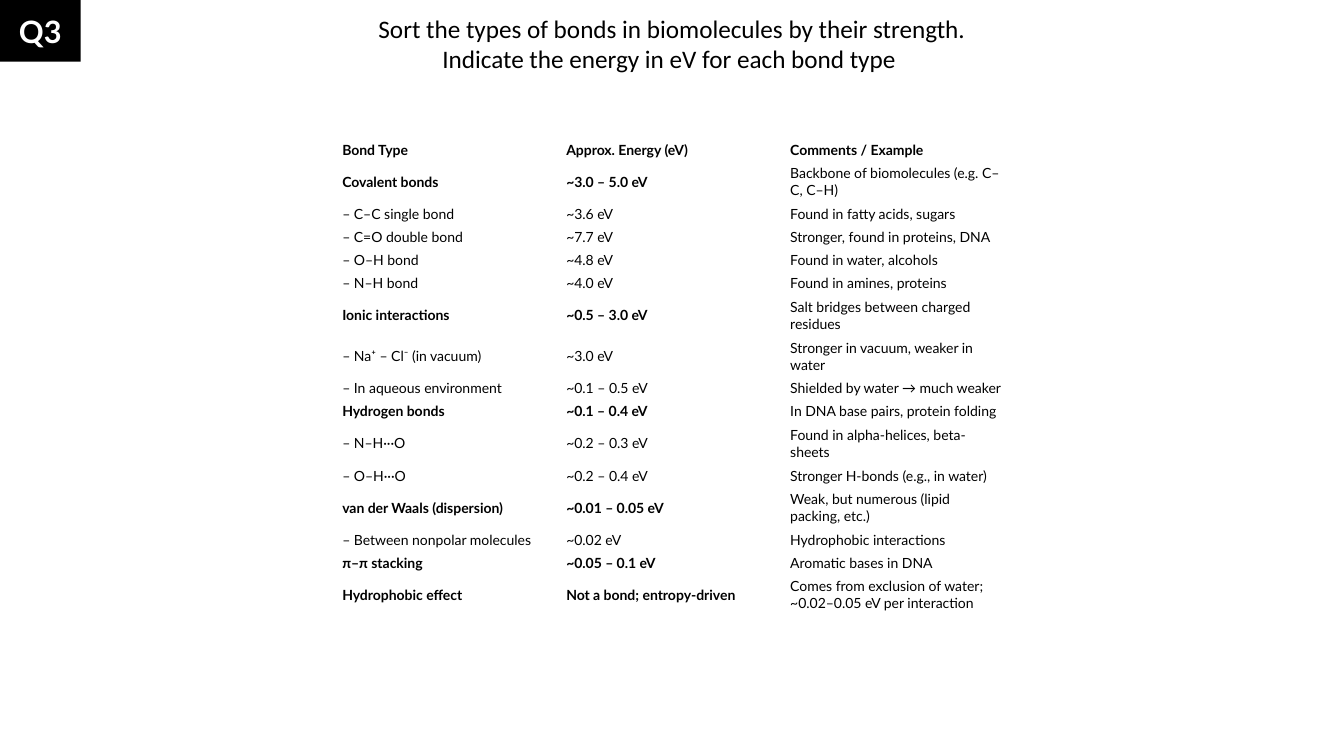
from dataclasses import dataclass

from pptx import Presentation
from pptx.dml.color import RGBColor
from pptx.enum import shapes, text
from pptx.util import Pt


@dataclass(frozen=True)
class Theme:
    ink: RGBColor = RGBColor(0, 0, 0)
    paper: RGBColor = RGBColor(255, 255, 255)
    title_font: str = "Calibri"
    body_font: str = "Lato"
    title_size: int = 18
    badge_size: int = 22
    table_size: int = 10


THEME = Theme()

QUESTION = (
    "Sort the types of bonds in biomolecules by their strength.",
    "Indicate the energy in eV for each bond type ",
)
HEADINGS = ("Bond Type", "Approx. Energy (eV)", "Comments / Example")
BONDS = [
    ("Covalent bonds", "~3.0 – 5.0 eV", "Backbone of biomolecules (e.g. C–C, C–H)"),
    ("– C–C single bond", "~3.6 eV", "Found in fatty acids, sugars"),
    ("– C=O double bond", "~7.7 eV", "Stronger, found in proteins, DNA"),
    ("– O–H bond", "~4.8 eV", "Found in water, alcohols"),
    ("– N–H bond", "~4.0 eV", "Found in amines, proteins"),
    ("Ionic interactions", "~0.5 – 3.0 eV", "Salt bridges between charged residues"),
    ("– Na⁺ – Cl⁻ (in vacuum)", "~3.0 eV", "Stronger in vacuum, weaker in water"),
    ("– In aqueous environment", "~0.1 – 0.5 eV", "Shielded by water → much weaker"),
    ("Hydrogen bonds", "~0.1 – 0.4 eV", "In DNA base pairs, protein folding"),
    ("– N–H···O", "~0.2 – 0.3 eV", "Found in alpha-helices, beta-sheets"),
    ("– O–H···O", "~0.2 – 0.4 eV", "Stronger H-bonds (e.g., in water)"),
    ("van der Waals (dispersion)", "~0.01 – 0.05 eV",
     "Weak, but numerous (lipid packing, etc.)"),
    ("– Between nonpolar molecules", "~0.02 eV", "Hydrophobic interactions"),
    ("π–π stacking", "~0.05 – 0.1 eV", "Aromatic bases in DNA"),
    ("Hydrophobic effect", "Not a bond; entropy-driven",
     "Comes from exclusion of water; ~0.02–0.05 eV per interaction"),
]
ONE_LINE, TWO_LINES = 16.6, 29.2
LONGEST_LINE = 33  # characters of a comment that fit on one line


def style(paragraph, font, size, color, bold=False):
    paragraph.font.name = font
    paragraph.font.size = Pt(size)
    paragraph.font.color.rgb = color
    paragraph.font.bold = bold


def add_question(slide):
    title = slide.shapes.title
    title.left, title.top, title.width, title.height = Pt(0), Pt(5.8), Pt(960), Pt(51)
    frame = title.text_frame
    frame.text = "\n".join(QUESTION)
    frame.word_wrap = True
    frame.vertical_anchor = text.MSO_ANCHOR.TOP
    frame.auto_size = text.MSO_AUTO_SIZE.SHAPE_TO_FIT_TEXT
    for line in frame.paragraphs:
        line.alignment = text.PP_ALIGN.CENTER
        style(line, THEME.title_font, THEME.title_size, THEME.ink)


def add_badge(slide, label):
    """Black corner block with the question number on it."""
    block = slide.shapes.add_shape(
        shapes.MSO_SHAPE.RECTANGLE, Pt(0), Pt(0), Pt(57.6), Pt(44))
    block.shadow.inherit = False
    block.fill.solid()
    block.fill.fore_color.rgb = THEME.ink
    block.line.fill.background()

    number = slide.shapes.add_textbox(Pt(0), Pt(5.8), Pt(57.6), Pt(33.8))
    frame = number.text_frame
    frame.word_wrap = True
    frame.text = label
    frame.paragraphs[0].alignment = text.PP_ALIGN.CENTER
    style(frame.paragraphs[0], THEME.body_font, THEME.badge_size, THEME.paper, bold=True)


def fill_cell(cell, content, bold):
    cell.fill.background()
    cell.vertical_anchor = text.MSO_ANCHOR.MIDDLE
    cell.margin_left = cell.margin_right = Pt(4.5)
    cell.margin_top = cell.margin_bottom = Pt(2.25)
    cell.text = content
    style(cell.text_frame.paragraphs[0], THEME.body_font, THEME.table_size,
          THEME.ink, bold)


def add_bond_table(slide):
    entries = [HEADINGS, *BONDS]
    heights = [TWO_LINES if len(comment) > LONGEST_LINE and "DNA" not in comment
               else ONE_LINE for _, _, comment in entries]
    table = slide.shapes.add_table(
        len(entries), len(HEADINGS), Pt(240), Pt(98.6), Pt(480), Pt(sum(heights))).table
    table.first_row = table.horz_banding = False
    for row, (entry, height) in enumerate(zip(entries, heights)):
        table.rows[row].height = Pt(height)
        is_group = not entry[0].startswith("–")
        for column, content in enumerate(entry):
            bold = row == 0 or (is_group and column < 2)
            fill_cell(table.cell(row, column), content, bold)


def main():
    deck = Presentation()
    deck.slide_width, deck.slide_height = Pt(960), Pt(540)
    slide = deck.slides.add_slide(deck.slide_layouts.get_by_name("Title Only"))
    add_question(slide)
    add_badge(slide, "Q3")
    add_bond_table(slide)
    deck.save("out.pptx")


if __name__ == "__main__":
    main()
